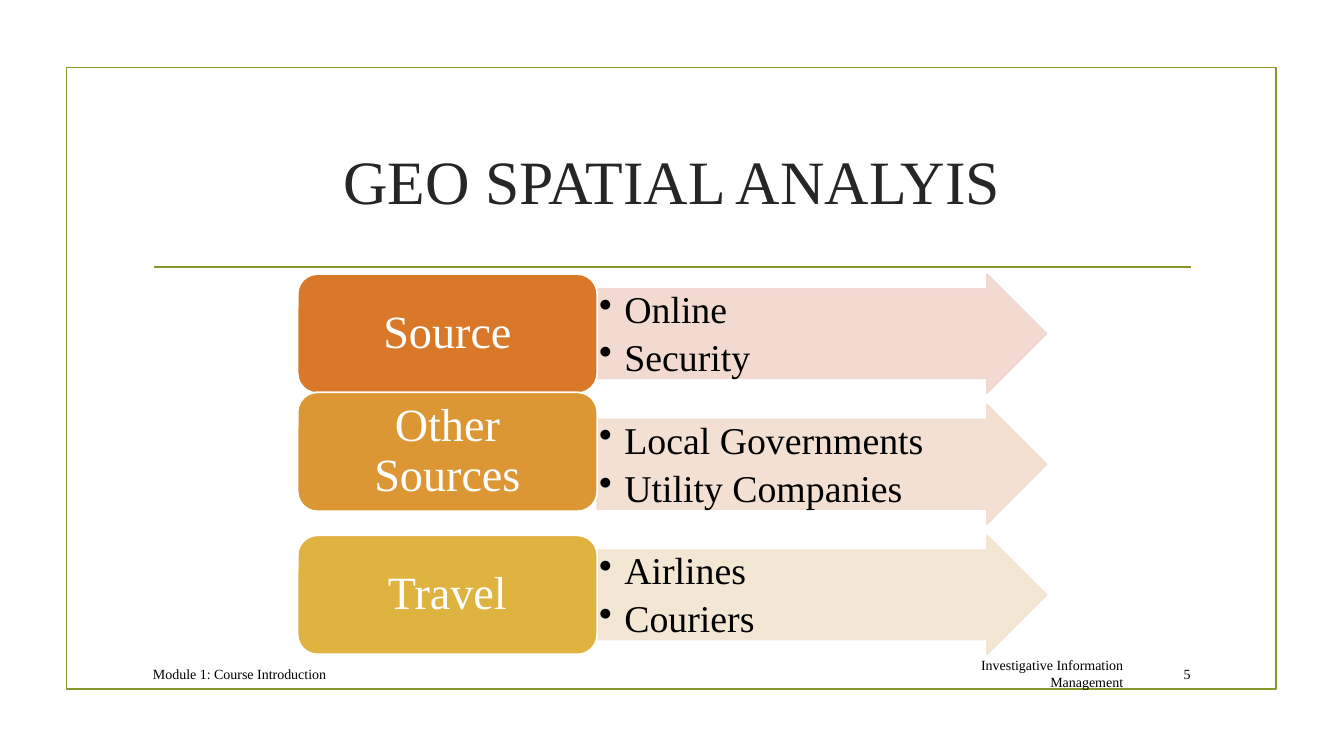
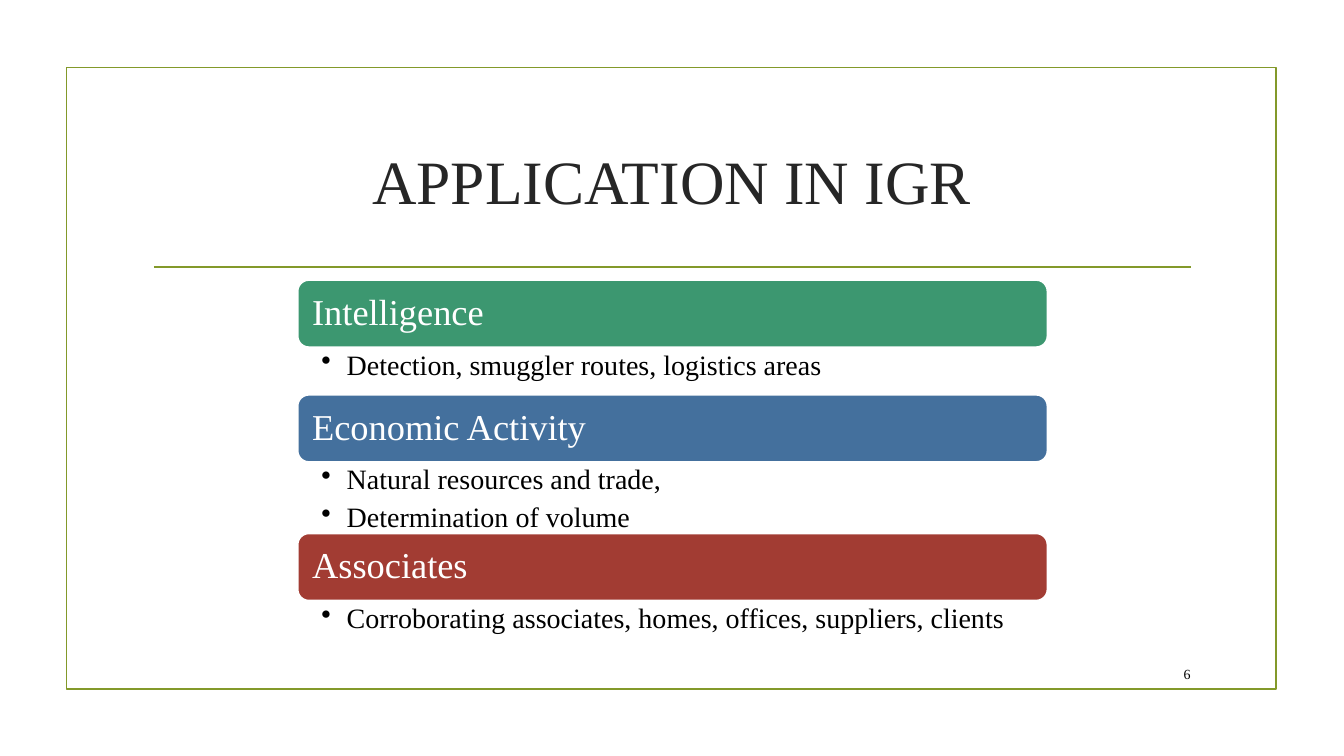
from dataclasses import dataclass

from lxml import etree
from pptx import Presentation
from pptx.dml.color import RGBColor
from pptx.enum import shapes, text
from pptx.oxml import ns
from pptx.util import Pt


@dataclass(frozen=True)
class Theme:
    font: str = "Times New Roman"
    accent: str = "83992A"
    title: str = "262626"
    ink: str = "000000"
    white: str = "FFFFFF"
    line: float = 1.25
    title_size: int = 44
    label_size: int = 33
    arrow_size: int = 27
    header_size: int = 26
    body_size: int = 20
    footer_size: int = 10


theme = Theme()
kinds = shapes.MSO_SHAPE
align = text.PP_ALIGN
anchor = text.MSO_ANCHOR


def write(box, lines, size, color=theme.ink, alignment=align.LEFT,
          middle=True, insets=(7.2, 3.6, 7.2, 3.6), spacing=1.0, bullets=False):
    """Fill a shape with evenly styled paragraphs."""
    frame = box.text_frame
    frame.word_wrap = True
    frame.vertical_anchor = anchor.MIDDLE if middle else anchor.TOP
    frame.margin_left, frame.margin_top, frame.margin_right, frame.margin_bottom = map(Pt, insets)
    frame.text = "\n".join(lines)
    for para in frame.paragraphs:
        para.alignment = alignment
        para.line_spacing = spacing
        if bullets:
            para.space_after = Pt(5)
            props = para._p.get_or_add_pPr()
            props.set("marL", str(Pt(18)))
            props.set("indent", str(-Pt(18)))
            etree.SubElement(props, ns.qn("a:buChar"), char="•")
        para.font.name = theme.font
        para.font.size = Pt(size)
        para.font.color.rgb = RGBColor.from_string(color)


def add_block(page, kind, left, top, width, height, fill, line, opacity=100):
    """Add a preset shape; without a fill colour it is an outline."""
    block = page.shapes.add_shape(kind, Pt(left), Pt(top), Pt(width), Pt(height))
    block.shadow.inherit = False
    if fill:
        block.fill.solid()
        block.fill.fore_color.rgb = RGBColor.from_string(fill)
    else:
        block.fill.background()
    block.line.color.rgb = RGBColor.from_string(line)
    block.line.width = Pt(theme.line)
    if opacity < 100:
        for color in block._element.spPr.iter(ns.qn("a:srgbClr")):
            etree.SubElement(color, ns.qn("a:alpha"), val=str(opacity * 1000))
    return block


deck = Presentation()
deck.slide_width, deck.slide_height = Pt(960), Pt(540)

# Shared parts: frame, rule, title and footers
footer_left = ("Module 1: Course Introduction", 102.2, 575, align.LEFT)
footer_right = ("Investigative Information Management", 683.3, 126, align.RIGHT)
pages = []
for title, number, footers in (
    ("GEO SPATIAL ANALYIS", "5", [footer_left, footer_right]),
    ("APPLICATION IN IGR", "6", []),
):
    page = deck.slides.add_slide(deck.slide_layouts[5])
    pages.append(page)
    add_block(page, kinds.RECTANGLE, 47.5, 48.2, 864, 444, None, theme.accent)

    rule = page.shapes.add_connector(
        shapes.MSO_CONNECTOR.STRAIGHT, Pt(110), Pt(190.8), Pt(850.4), Pt(190.8))
    rule.line.color.rgb = RGBColor.from_string(theme.accent)
    rule.line.width = Pt(theme.line)
    etree.SubElement(rule._element.spPr, ns.qn("a:effectLst"))

    heading = page.shapes.title
    heading.left, heading.top, heading.width, heading.height = map(Pt, (102, 77, 756, 103))
    write(heading, [title], theme.title_size, theme.title, align.CENTER)

    for words, left, width, alignment in footers + [(number, 815, 42.5, align.RIGHT)]:
        box = page.shapes.add_textbox(Pt(left), Pt(470), Pt(width), Pt(22.4))
        write(box, [words], theme.footer_size, alignment=alignment)

geo_page, application_page = pages
left = 212.6

# Geo spatial analysis: labels with arrows
row_height, label_width, arrow_width = 85, 214, 321
arrow_top, arrow_pitch = 195.8, 93.3
sources = [
    ("Source", "D97828", 195.8, "F1D6CD", ["Online", "Security"]),
    ("Other Sources", "DC9734", 280.2, "F2DDCE", ["Local Governments", "Utility Companies"]),
    ("Travel", "DEB340", 382.4, "F2E4CF", ["Airlines", "Couriers"]),
]
for row, (name, color, label_top, tint, examples) in enumerate(sources):
    arrow = add_block(geo_page, kinds.RIGHT_ARROW, left + label_width,
                      arrow_top + row * arrow_pitch, arrow_width, row_height, tint, tint, 90)
    arrow.adjustments[0] = 0.75
    arrow.adjustments[1] = 0.5
    write(arrow, examples, theme.arrow_size, middle=False,
          insets=(1.4, 1.4, 1.4, 1.4), spacing=0.9, bullets=True)
    label = add_block(geo_page, kinds.ROUNDED_RECTANGLE, left, label_top,
                      label_width, row_height, color, theme.white)
    write(label, [name], theme.label_size, theme.white, align.CENTER,
          insets=(10.5, 5, 10.5, 5), spacing=0.9)

# Application: header bars stacked with their bullets
bar_width, bar_height, line_height = 535.6, 48, 17
top = 200
uses = [
    ("Intelligence", "3C9770", ["Detection, smuggler routes, logistics areas"]),
    ("Economic Activity", "44709D", ["Natural resources and trade,", "Determination of volume"]),
    ("Associates", "A23C33", ["Corroborating associates, homes, offices, suppliers, clients"]),
]
for name, color, details in uses:
    bar = add_block(application_page, kinds.ROUNDED_RECTANGLE, left, top,
                    bar_width, bar_height, color, theme.white)
    write(bar, [name], theme.header_size, theme.white, insets=(8, 8, 8, 8), spacing=0.9)
    top += bar_height
    body_height = line_height * (len(details) + 1)
    body = application_page.shapes.add_textbox(Pt(left), Pt(top), Pt(bar_width), Pt(body_height))
    write(body, details, theme.body_size, middle=False,
          insets=(17, 2.6, 14.4, 2.6), spacing=0.9, bullets=True)
    top += body_height

deck.save("out.pptx")
